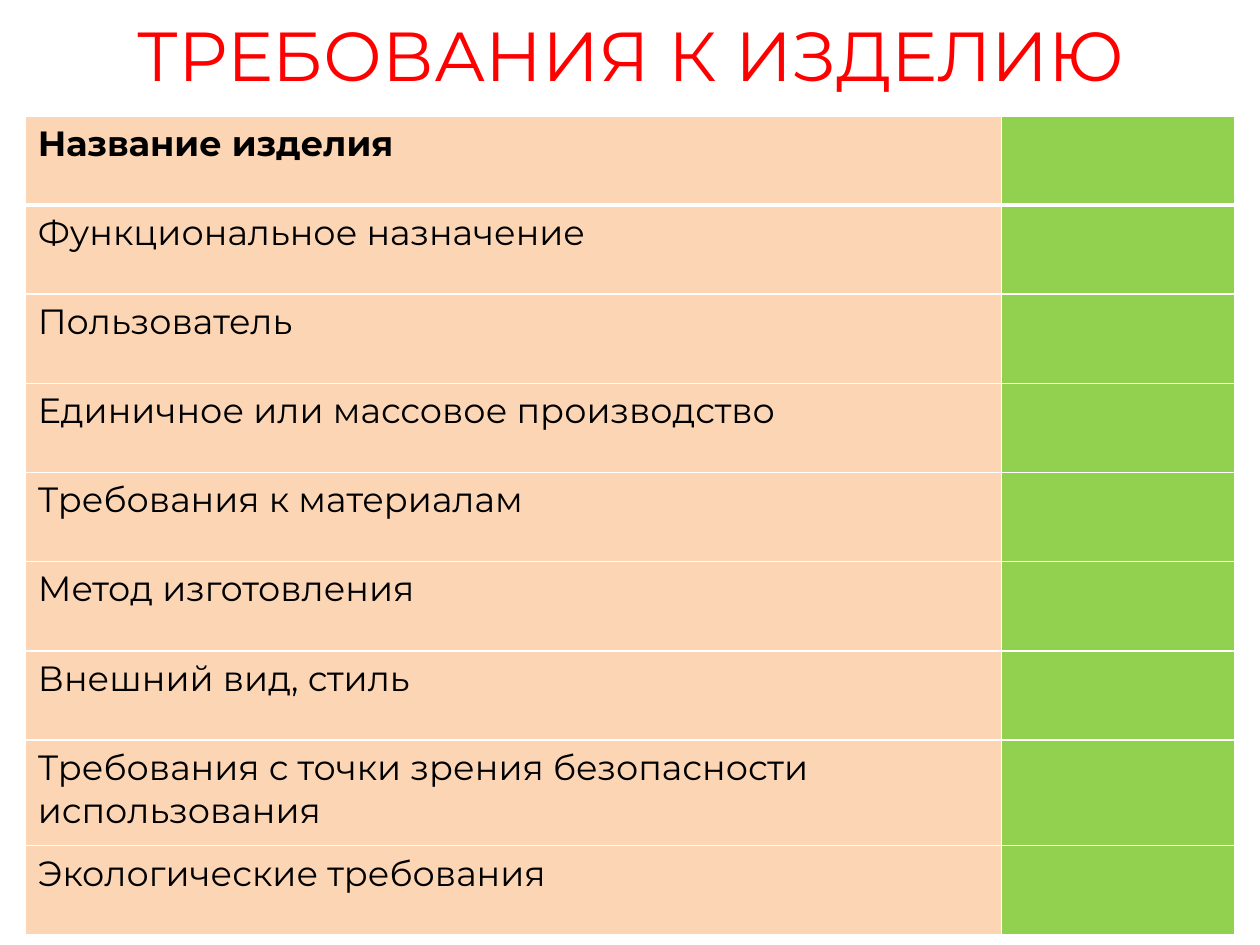
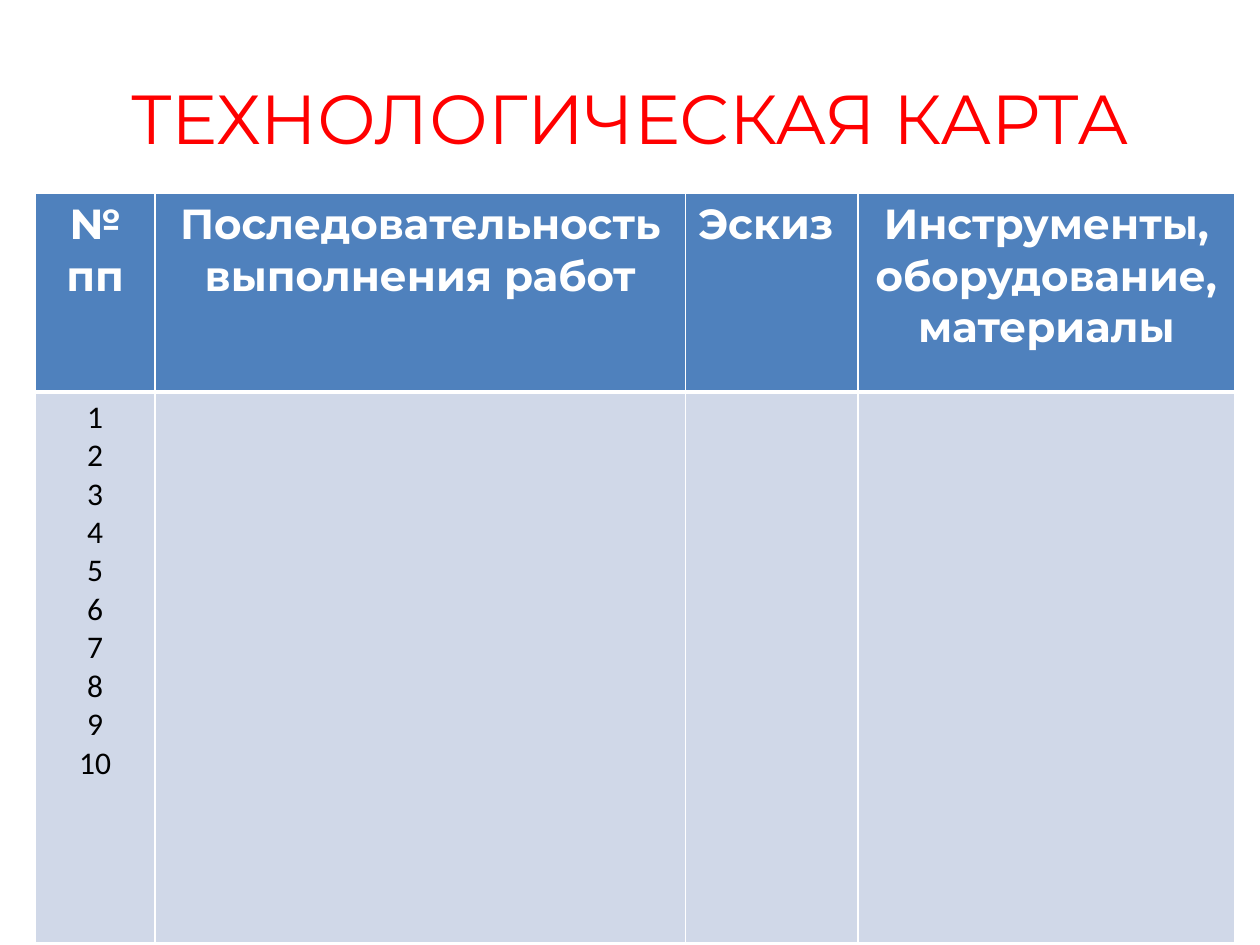
import pptx
import pptx.dml.color
import pptx.enum.text
import pptx.oxml.ns
import pptx.util
from lxml import etree

WIDTH, HEIGHT = 10, 7.5
COLUMNS, ROWS = 100, 75
HEAD_FONT, BODY_FONT = "Montserrat", "Calibri"
RED, BLACK, WHITE = "FF0000", "000000", "FFFFFF"
PEACH, GREEN, BLUE, PALE_BLUE = "FCD5B5", "92D050", "4F81BD", "D0D8E8"
ALIGN = pptx.enum.text.PP_ALIGN

REQUIREMENTS = [
    "Название изделия",
    "Функциональное назначение",
    "Пользователь",
    "Единичное или массовое производство",
    "Требования к материалам",
    "Метод изготовления",
    "Внешний вид, стиль",
    "Требования с точки зрения безопасности использования",
    "Экологические требования",
]
CARD_HEADINGS = [
    "№ пп",
    "Последовательность выполнения работ",
    "Эскиз ",
    "Инструменты, оборудование, материалы",
]


def color(hex_string):
    """Turn a hex string into a colour."""
    return pptx.dml.color.RGBColor.from_string(hex_string)


def cols(n):
    """Length of n grid columns."""
    return pptx.util.Inches(n * WIDTH / COLUMNS)


def rows(n):
    """Length of n grid rows."""
    return pptx.util.Inches(n * HEIGHT / ROWS)


def place(box):
    """Turn a grid box into left, top, width and height."""
    left, top, width, height = box
    return cols(left), rows(top), cols(width), rows(height)


def write(tf, text, size=20, font=HEAD_FONT, fill=BLACK, bold=False, align=ALIGN.LEFT):
    """Write each line of text as a formatted paragraph."""
    for i, line in enumerate(text.split("\n")):
        p = tf.add_paragraph() if i else tf.paragraphs[0]
        p.alignment = align
        r = p.add_run()
        r.text = line
        r.font.size = pptx.util.Pt(size)
        r.font.name = font
        r.font.bold = bold
        r.font.color.rgb = color(fill)


def add_title(slide, text, box):
    """Add a centred red slide title."""
    tf = slide.shapes.add_textbox(*place(box)).text_frame
    tf.word_wrap = True
    tf.vertical_anchor = pptx.enum.text.MSO_ANCHOR.MIDDLE
    write(tf, text, size=39.6, fill=RED, align=ALIGN.CENTER)


def style_cell(cell, fill, top, bottom):
    """Fill a cell and draw its white borders."""
    qn = pptx.oxml.ns.qn
    cell.fill.solid()
    cell.fill.fore_color.rgb = color(fill)
    tc_pr = cell._tc.get_or_add_tcPr()
    for i, (side, width) in enumerate((("L", 1), ("R", 1), ("T", top), ("B", bottom))):
        ln = etree.Element(qn(f"a:ln{side}"), w=str(pptx.util.Pt(width)))
        solid = etree.SubElement(ln, qn("a:solidFill"))
        etree.SubElement(solid, qn("a:srgbClr"), val=WHITE)
        tc_pr.insert(i, ln)


def add_grid(slide, box, widths, heights, fill_of):
    """Add a table with a thick rule under its first row."""
    table = slide.shapes.add_table(len(heights), len(widths), *place(box)).table
    table.first_row = table.horz_banding = False
    for column, width in zip(table.columns, widths):
        column.width = cols(width)
    for row, height in zip(table.rows, heights):
        row.height = rows(height)
    for i in range(len(heights)):
        for j in range(len(widths)):
            style_cell(table.cell(i, j), fill_of(i, j), 3 if i == 1 else 1, 1 if i else 3)
    return table


def add_requirements(slide, box):
    """Add the list of requirements with an empty answer column."""
    width, height = box[2:]
    answer, tall = 18.5, 8.4
    count = len(REQUIREMENTS)
    heights = [(height - tall) / (count - 1)] * count
    heights[-2] = tall
    table = add_grid(slide, box, [width - answer, answer], heights,
                     lambda i, j: GREEN if j else PEACH)
    for i, text in enumerate(REQUIREMENTS):
        write(table.cell(i, 0).text_frame, text, bold=i == 0,
              align=ALIGN.LEFT if i else ALIGN.JUSTIFY)


def add_process_card(slide, box):
    """Add the process card with numbered steps."""
    width, height = box[2:]
    number, sketch, tools, heading = 9.5, 13.7, 29.9, 15.8
    widths = [number, width - number - sketch - tools, sketch, tools]
    table = add_grid(slide, box, widths, [heading, height - heading],
                     lambda i, j: PALE_BLUE if i else BLUE)
    for j, text in enumerate(CARD_HEADINGS):
        write(table.cell(0, j).text_frame, text, size=24, fill=WHITE, bold=True,
              align=ALIGN.CENTER)
    steps = "\n".join(str(n) for n in range(1, 11))
    write(table.cell(1, 0).text_frame, steps, size=18, font=BODY_FONT, align=ALIGN.CENTER)


def main():
    """Build and save the presentation."""
    prs = pptx.Presentation()
    prs.slide_width, prs.slide_height = cols(COLUMNS), rows(ROWS)
    blank = prs.slide_layouts[6]

    slide = prs.slides.add_slide(blank)
    add_title(slide, "ТРЕБОВАНИЯ К ИЗДЕЛИЮ", (5.1, 0, 90, 8.5))
    add_requirements(slide, (2, 9.2, 96, 65))

    slide = prs.slides.add_slide(blank)
    add_title(slide, "ТЕХНОЛОГИЧЕСКАЯ КАРТА", (5, 3, 90, 12.5))
    add_process_card(slide, (2.8, 15.3, 95.2, 59.5))

    prs.save("out.pptx")


if __name__ == "__main__":
    main()
